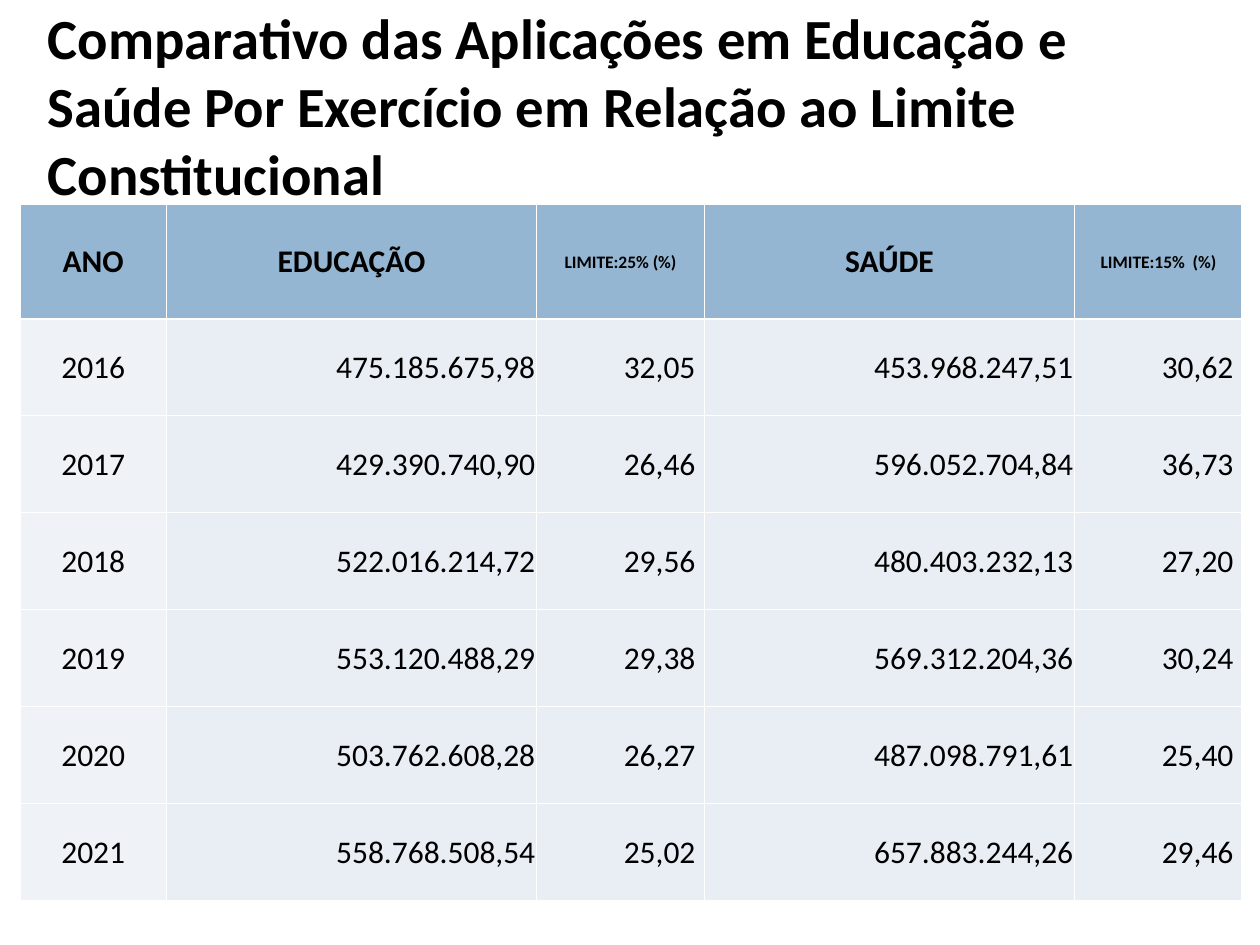
from lxml import etree
from pptx import Presentation
from pptx.dml.color import RGBColor
from pptx.enum import text
from pptx.oxml import ns
from pptx.util import Inches, Pt

TITLE = ("Comparativo das Aplicações em Educação e Saúde Por Exercício "
         "em Relação ao Limite Constitucional")
HEADERS = ["ANO", "EDUCAÇÃO", "LIMITE:25% (%)", "SAÚDE", "LIMITE:15%  (%)"]
ROWS = [
    ["2016", "475.185.675,98", "32,05", "453.968.247,51", "30,62"],
    ["2017", "429.390.740,90", "26,46", "596.052.704,84", "36,73"],
    ["2018", "522.016.214,72", "29,56", "480.403.232,13", "27,20"],
    ["2019", "553.120.488,29", "29,38", "569.312.204,36", "30,24"],
    ["2020", "503.762.608,28", "26,27", "487.098.791,61", "25,40"],
    ["2021", "558.768.508,54", "25,02", "657.883.244,26", "29,46"],
]
YEAR_COLUMN = 0
PERCENT_COLUMNS = (2, 4)
COLUMN_WIDTHS = [1.16, 2.94, 1.33, 2.94, 1.33]
HEADER_HEIGHT, ROW_HEIGHT = 0.91, 0.77


def color(value):
    """Turn a hex string into a colour."""
    return RGBColor.from_string(value)


def format_text(text_frame, size, bold, alignment):
    """Apply the slide's font and an alignment to every paragraph."""
    for paragraph in text_frame.paragraphs:
        paragraph.alignment = alignment
        for run in paragraph.runs:
            run.font.name = "Calibri"
            run.font.size = Pt(size)
            run.font.bold = bold
            run.font.color.rgb = color("000000")


def set_borders(cell, value, width):
    """Draw a solid line on the four sides of a cell."""
    properties = cell._tc.get_or_add_tcPr()
    for position, side in enumerate(("lnL", "lnR", "lnT", "lnB")):
        line = etree.Element(ns.qn(f"a:{side}"), w=str(Pt(width)))
        fill = etree.SubElement(line, ns.qn("a:solidFill"))
        etree.SubElement(fill, ns.qn("a:srgbClr"), val=value)
        properties.insert(position, line)


def fill_cell(cell, content, fill, size, bold, alignment, margin_right=0.01):
    """Write and style one table cell."""
    cell.text_frame.text = content
    cell.vertical_anchor = text.MSO_ANCHOR.MIDDLE
    cell.margin_left = cell.margin_top = Inches(0.01)
    cell.margin_right = Inches(margin_right)
    cell.margin_bottom = 0
    cell.fill.solid()
    cell.fill.fore_color.rgb = color(fill)
    format_text(cell.text_frame, size, bold, alignment)
    set_borders(cell, "FFFFFF", 1)


def add_title(slide):
    """Place the title in its placeholder."""
    title = slide.shapes.title
    title.left, title.top = Inches(0.28), Inches(0.21)
    title.width, title.height = Inches(9.45), Inches(1.25)
    title.text_frame.text = TITLE
    title.text_frame.word_wrap = True
    title.text_frame.auto_size = text.MSO_AUTO_SIZE.NONE
    title.text_frame.vertical_anchor = text.MSO_ANCHOR.MIDDLE
    format_text(title.text_frame, 32.4, True, text.PP_ALIGN.LEFT)


def add_spending_table(slide):
    """Add the table of spending by year."""
    height = HEADER_HEIGHT + ROW_HEIGHT * len(ROWS)
    table = slide.shapes.add_table(
        len(ROWS) + 1, len(HEADERS), Inches(0.16), Inches(1.62),
        Inches(sum(COLUMN_WIDTHS)), Inches(height)).table
    for column, width in zip(table.columns, COLUMN_WIDTHS):
        column.width = Inches(width)
    for index, row in enumerate(table.rows):
        row.height = Inches(ROW_HEIGHT if index else HEADER_HEIGHT)

    for column, header in enumerate(HEADERS):
        size = 10 if column in PERCENT_COLUMNS else 18
        fill_cell(table.cell(0, column), header, "94B6D2", size, True,
                  text.PP_ALIGN.CENTER)
    for row, values in enumerate(ROWS, start=1):
        for column, value in enumerate(values):
            is_year = column == YEAR_COLUMN
            fill_cell(table.cell(row, column), value,
                      "EFF3F7" if is_year else "E9EDF4", 18, False,
                      text.PP_ALIGN.CENTER if is_year else text.PP_ALIGN.RIGHT,
                      0.07 if column in PERCENT_COLUMNS else 0.01)


def main():
    """Build the slide and save it."""
    presentation = Presentation()
    presentation.slide_width = Inches(10)
    presentation.slide_height = Inches(7.5)
    slide = presentation.slides.add_slide(presentation.slide_layouts[5])
    add_title(slide)
    add_spending_table(slide)
    presentation.save("out.pptx")


if __name__ == "__main__":
    main()
